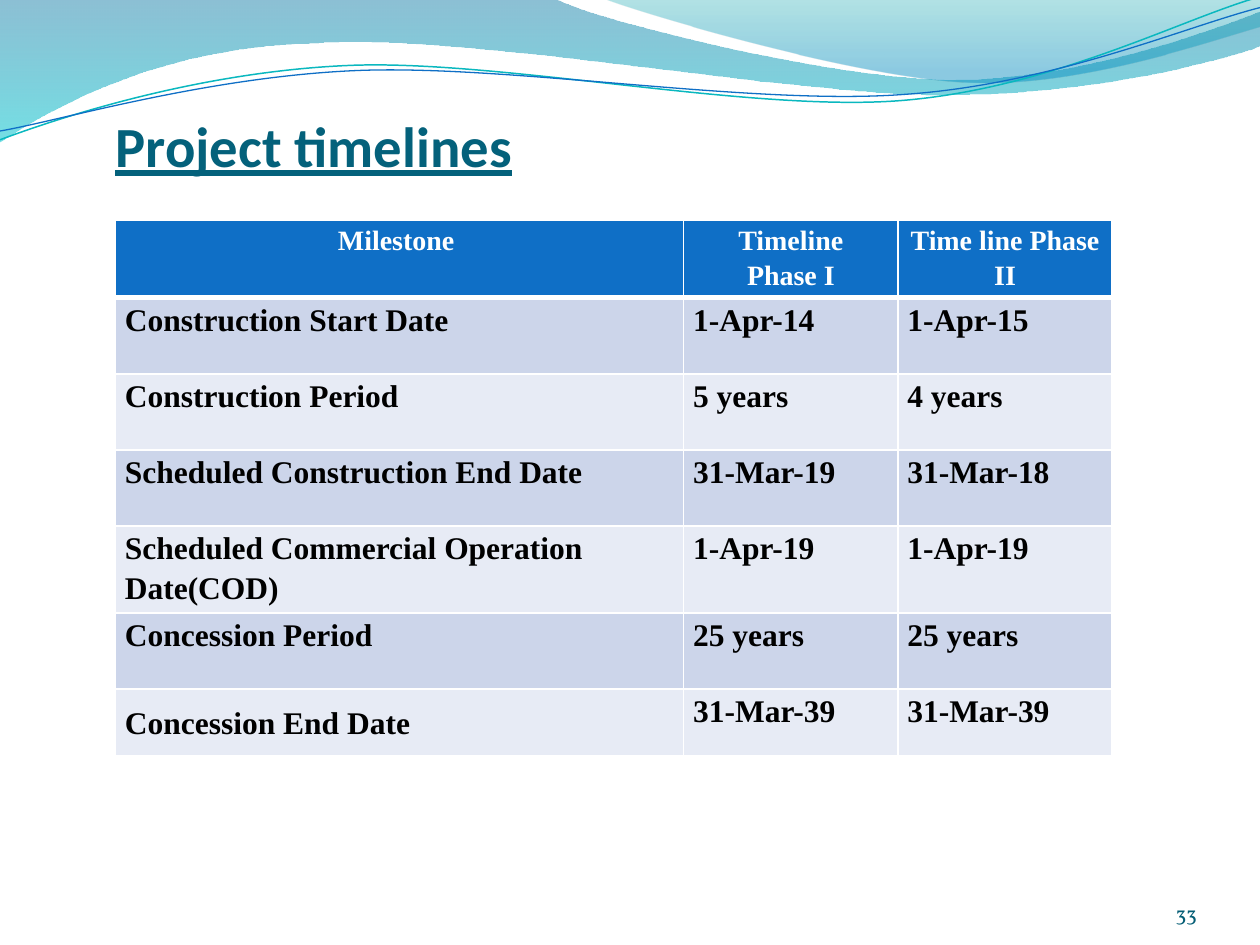
from lxml.etree import SubElement
from pptx import Presentation
from pptx.dml.color import RGBColor
from pptx.enum.text import MSO_ANCHOR, PP_ALIGN
from pptx.oxml import parse_xml
from pptx.oxml.ns import nsdecls, qn
from pptx.util import Inches, Pt
from math import cos, radians, sin

COLORS = {
    "title": "04617B", "number": "045D75", "header": "0F6FC6",
    "odd": "CCD5EA", "even": "E7EBF5", "white": "FFFFFF", "black": "000000",
    "teal_line": "0AB8BF", "blue_line": "0F6FC6",
    "deep": "0074A1", "aqua": "00C6CF", "sea": "00A1A9", "sky": "008BBF",
}
BODY_FONT = "Times New Roman"
LEFT = 11 / 12
CELL_INSET = 0.15 / 2


class Deck:
    def __init__(self):
        self.presentation = Presentation()
        self.presentation.slide_width = Inches(10)
        self.presentation.slide_height = Inches(7.5)
        self.slide = self.presentation.slides.add_slide(self.presentation.slide_layouts[6])

    def color(self, name):
        return RGBColor.from_string(COLORS[name])

    def outline(self, box, start, segments, close, tilt=0):
        left, top, width, height = box
        center_x, center_y = left + width / 2, top + height / 2
        c, s = cos(radians(-tilt)), sin(radians(-tilt))

        def place(x, y):
            dx, dy = x - center_x, y - center_y
            return (Inches(dx * c - dy * s + width / 2),
                    Inches(dx * s + dy * c + height / 2))

        builder = self.slide.shapes.build_freeform(*place(*start), scale=1.0)
        builder.add_line_segments([place(*segment[-2:]) for segment in segments], close=close)
        shape = builder.convert_to_shape()
        shape.left, shape.top, shape.width, shape.height = map(Inches, box)
        shape.rotation = tilt
        shape.shadow.inherit = False

        contour = shape.element.spPr.find(".//" + qn("a:path"))
        contour.set("w", str(shape.width))
        contour.set("h", str(shape.height))
        for step in list(contour):
            contour.remove(step)
        for segment in [start, *segments]:
            kind = "moveTo" if segment is start else "lnTo" if len(segment) == 2 else "cubicBezTo"
            step = SubElement(contour, qn(f"a:{kind}"))
            for point in zip(segment[::2], segment[1::2]):
                x, y = place(*point)
                SubElement(step, qn("a:pt"), x=str(x), y=str(y))
        if close:
            SubElement(contour, qn("a:close"))
        return shape

    def band(self, box, start, segments, stops):
        shape = self.outline(box, start, segments, True)
        shape.line.fill.background()
        shape.fill.gradient()
        marks = "".join(
            f'<a:gs pos="{place * 1000}"><a:srgbClr val="{COLORS[name]}">'
            f'<a:alpha val="{opacity * 1000}"/></a:srgbClr></a:gs>'
            for place, name, opacity in stops)
        gradient = parse_xml(f'<a:gradFill {nsdecls("a")} rotWithShape="1"><a:gsLst>{marks}</a:gsLst>'
                             '<a:lin ang="5400000" scaled="0"/></a:gradFill>')
        properties = shape.element.spPr
        properties.replace(properties.find(qn("a:gradFill")), gradient)

    def wave(self, box, start, segments, color, width):
        shape = self.outline(box, start, segments, False, tilt=-2.7)
        shape.fill.background()
        shape.line.color.rgb = self.color(color)
        shape.line.width = Pt(width)

    def style(self, paragraph, font, size, color, bold=False, underline=False):
        for run in paragraph.runs:
            run.font.name = font
            run.font.size = Pt(size)
            run.font.color.rgb = self.color(color)
            run.font.bold = bold
            run.font.underline = underline

    def text(self, wording, box, align, top_inset=0, **look):
        frame = self.slide.shapes.add_textbox(*map(Inches, box)).text_frame
        frame.word_wrap = True
        frame.vertical_anchor = MSO_ANCHOR.BOTTOM
        frame.margin_left = frame.margin_right = frame.margin_bottom = 0
        frame.margin_top = Inches(top_inset)
        frame.text = wording
        frame.paragraphs[0].alignment = align
        self.style(frame.paragraphs[0], **look)

    def borders(self, cell, top, bottom):
        properties = cell._tc.get_or_add_tcPr()
        sides = (("lnL", 1), ("lnR", 1), ("lnT", top), ("lnB", bottom))
        for index, (side, width) in enumerate(sides):
            line = SubElement(properties, qn(f"a:{side}"), w=str(Pt(width)))
            fill = SubElement(line, qn("a:solidFill"))
            SubElement(fill, qn("a:srgbClr"), val=COLORS["white"])
            properties.insert(index, line)

    def cell(self, cell, wording, row, column, last):
        header = row == 0
        cell.margin_left = cell.margin_right = Inches(CELL_INSET)
        cell.margin_top = cell.margin_bottom = 0
        cell.fill.solid()
        cell.fill.fore_color.rgb = self.color("header" if header else "odd" if row % 2 else "even")
        self.borders(cell, 3 if row == 1 else 1, 3 if header else 1)
        cell.text_frame.text = wording
        closing = last and column == 0
        for paragraph in cell.text_frame.paragraphs:
            paragraph.line_spacing = 1.5 if closing else 1.15
            paragraph.alignment = (PP_ALIGN.CENTER if header else
                                   PP_ALIGN.JUSTIFY if closing else PP_ALIGN.LEFT)
            self.style(paragraph, BODY_FONT, 16 if header else 18,
                       "white" if header else "black", bold=True)

    def table(self, rows, left, top, widths, heights):
        table = self.slide.shapes.add_table(
            len(rows), len(widths), Inches(left), Inches(top),
            Inches(sum(widths)), Inches(sum(heights))).table
        for column, width in zip(table.columns, widths):
            column.width = Inches(width)
        for index, (wordings, height) in enumerate(zip(rows, heights)):
            table.rows[index].height = Inches(height)
            for column, wording in enumerate(wordings):
                self.cell(table.cell(index, column), wording, index, column,
                          index == len(rows) - 1)


MILESTONES = [
    ("Milestone ", "Timeline\nPhase I", "Time line Phase II"),
    ("Construction Start Date", "1-Apr-14", "1-Apr-15"),
    ("Construction Period", "5 years", "4 years"),
    ("Scheduled Construction End Date", "31-Mar-19", "31-Mar-18"),
    ("Scheduled Commercial Operation Date(COD)", "1-Apr-19", "1-Apr-19"),
    ("Concession Period", "25 years", "25 years"),
    ("Concession End Date ", "31-Mar-39", "31-Mar-39"),
]


def main():
    deck = Deck()
    deck.band((-0.01, -0.01, 10.02, 1.14), (0, 0), [
        (4.4, -0.01), (4.76, 0.17, 6.64, 0.63, 7.58, 0.63),
        (8.53, 0.63, 9.58, 0.26, 10, 0.09), (10.01, 0.36),
        (9.83, 0.44, 8.7, 0.76, 7.46, 0.75), (6.22, 0.75, 3.82, 0.28, 2.57, 0.34),
        (1.29, 0.36, 0.46, 0.83, -0.01, 1.13), (0, 0)],
        [(0, "deep", 45), (100, "aqua", 55)])
    deck.band((4.79, -0.01, 5.21, 0.7), (4.79, -0.01), [
        (5.09, 0.11, 6.82, 0.62, 7.69, 0.65), (8.56, 0.69, 9.61, 0.32, 10, 0.21),
        (10, 0), (4.79, -0.01)],
        [(0, "sea", 30), (80, "sky", 45)])
    deck.wave((-0.02, 0.22, 10.02, 0.71), (0, 1.11), [
        (0.48, 0.93, 1.58, 0.57, 2.77, 0.52), (3.95, 0.47, 5.93, 0.89, 7.13, 0.8),
        (8.33, 0.71, 9.38, 0.15, 9.98, -0.02)], "teal_line", 0.85)
    deck.wave((-0.02, 0.3, 10.03, 0.58), (0, 1.04), [
        (0.47, 0.96, 1.64, 0.61, 2.83, 0.56), (4.03, 0.51, 5.97, 0.84, 7.17, 0.75),
        (8.36, 0.67, 9.41, 0.21, 10, 0.06)], "blue_line", 0.75)
    deck.text("Project timelines", (LEFT, 0.5, 8.17, 0.92), PP_ALIGN.LEFT, top_inset=0.05,
              font="Calibri", size=32.4, color="title", bold=True, underline=True)
    single = 3.02 / 5
    deck.table(MILESTONES, LEFT, 1.75, [4.51, 1.7, 1.7],
               [single] * 4 + [0.69, single, 0.53])
    deck.text("33", (8.67, 6.95, 0.83, 0.4), PP_ALIGN.RIGHT,
              font="Vollkorn", size=12, color="number")
    deck.presentation.save("out.pptx")


if __name__ == "__main__":
    main()
